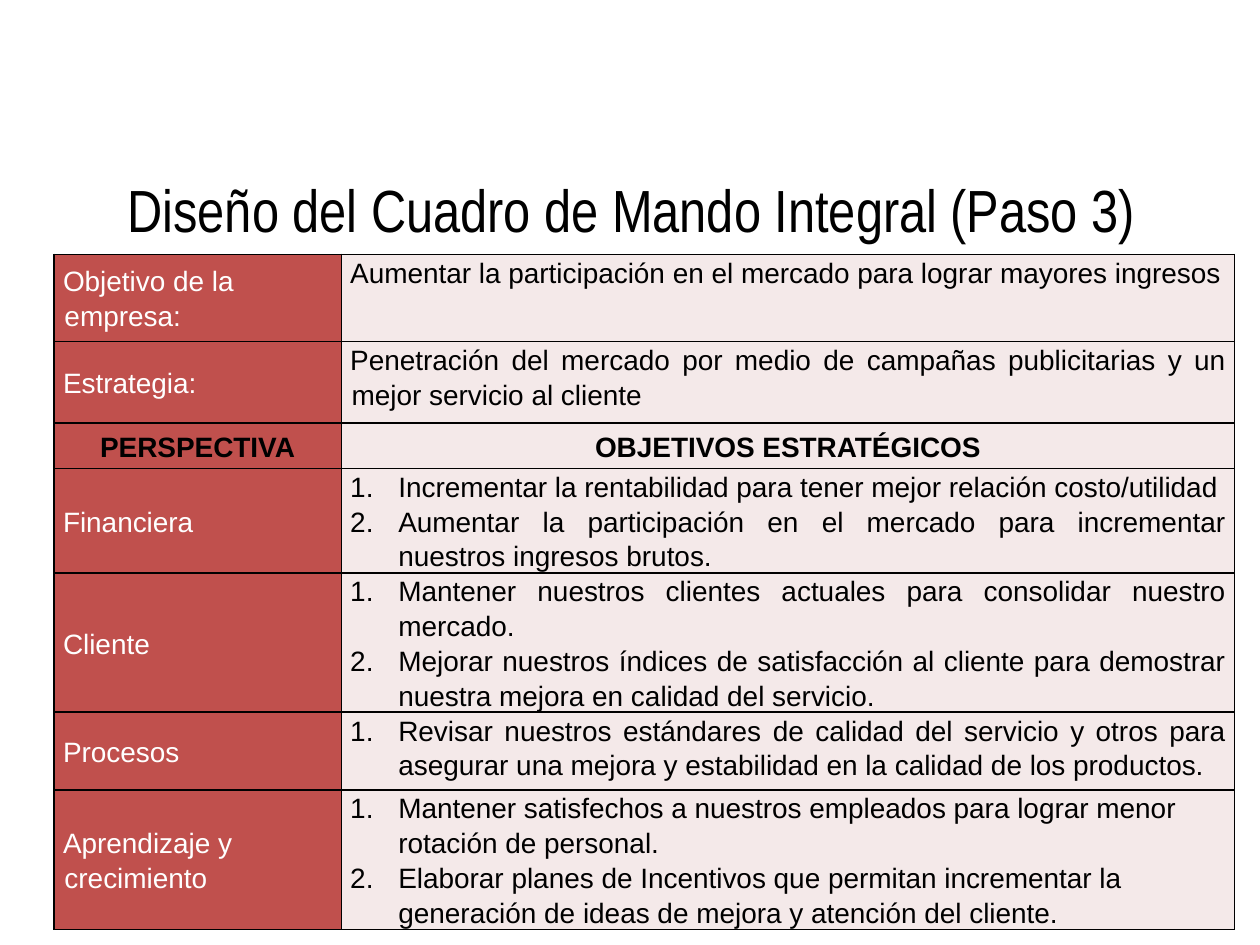
import pptx
import pptx.dml.color
import pptx.enum.text
import pptx.oxml
import pptx.oxml.ns
import pptx.util
from lxml import etree

Cm, Pt = pptx.util.Cm, pptx.util.Pt
ALIGN = pptx.enum.text.PP_ALIGN
ANCHOR = pptx.enum.text.MSO_ANCHOR

# Content: kind, left cell, right cell, row height in cm
TITLE = "Diseño del Cuadro de Mando Integral (Paso 3)"
ROWS = [
    ("plain", "Objetivo de la empresa:",
     ["Aumentar la participación en el mercado para lograr mayores ingresos"], 1.75),
    ("plain", "Estrategia:",
     ["Penetración del mercado por medio de campañas publicitarias y un mejor "
      "servicio al cliente"], 1.65),
    ("head", "PERSPECTIVA", ["OBJETIVOS ESTRATÉGICOS"], 0.91),
    ("list", "Financiera",
     ["Incrementar la rentabilidad para tener mejor relación costo/utilidad",
      "Aumentar la participación en el mercado para incrementar nuestros "
      "ingresos brutos."], 1.57),
    ("list", "Cliente",
     ["Mantener nuestros clientes actuales para consolidar nuestro mercado.",
      "Mejorar nuestros índices de satisfacción al cliente para demostrar "
      "nuestra mejora en calidad del servicio."], 2.36),
    ("list", "Procesos",
     ["Revisar nuestros estándares de calidad del servicio y otros para "
      "asegurar una mejora y estabilidad en la calidad de los productos."], 1.57),
    ("left list", "Aprendizaje y crecimiento",
     ["Mantener satisfechos a nuestros empleados para lograr menor rotación "
      "de personal.",
      "Elaborar planes de Incentivos que permitan incrementar la generación "
      "de ideas de mejora y atención del cliente."], 2.36),
]
WIDTHS = (5.79, 18.01)
RED, PINK, BLACK, WHITE = "C0504D", "F4E9E9", "000000", "FFFFFF"


def paint(target, color):
    target.rgb = pptx.dml.color.RGBColor.from_string(color)


def border(cell):
    props = cell._tc.get_or_add_tcPr()
    for place, side in enumerate(("lnL", "lnR", "lnT", "lnB")):
        line = pptx.oxml.parse_xml(
            f'<a:{side} {pptx.oxml.ns.nsdecls("a")} w="12700"><a:solidFill>'
            f'<a:srgbClr val="{BLACK}"/></a:solidFill></a:{side}>')
        props.insert(place, line)


def indent(para, size, number):
    props = para._p.get_or_add_pPr()
    props.set("marL", str(Cm(size)))
    props.set("indent", str(-Cm(size)))
    if number:
        mark = etree.SubElement(props, pptx.oxml.ns.qn("a:buAutoNum"))
        mark.set("type", "arabicPeriod")


def write(cell, texts, fill, color, align, anchor, bold=False, number=False):
    cell.fill.solid()
    paint(cell.fill.fore_color, fill)
    border(cell)
    cell.margin_left = cell.margin_right = Cm(0.18)
    cell.margin_top = cell.margin_bottom = 0
    cell.vertical_anchor = anchor
    cell.text = "\n".join(texts)
    for para in cell.text_frame.paragraphs:
        indent(para, 0.97 if number else 0.03, number)
        para.alignment = align
        para.line_spacing = 1.12
        font = para.font
        font.name, font.size, font.bold = "Arial", Pt(16), bold
        paint(font.color, color)


def main():
    deck = pptx.Presentation()
    deck.slide_width, deck.slide_height = Cm(25.4), Cm(19.05)
    slide = deck.slides.add_slide(deck.slide_layouts[5])

    # Title
    title = slide.shapes.title
    title.left, title.top = Cm(1.3), Cm(2.92)
    title.width, title.height = Cm(22.86), Cm(2.57)
    frame = title.text_frame
    frame.text = TITLE
    frame.vertical_anchor = ANCHOR.MIDDLE
    para = frame.paragraphs[0]
    para.alignment = ALIGN.CENTER
    para.font.name, para.font.size = "Arial Narrow", Pt(34)
    paint(para.font.color, BLACK)

    # Table
    high = sum(row[-1] for row in ROWS)
    table = slide.shapes.add_table(len(ROWS), 2, Cm(1.09), Cm(5.13),
                                   Cm(sum(WIDTHS)), Cm(high)).table
    table.first_row = table.horz_banding = False
    for col, width in zip(table.columns, WIDTHS):
        col.width = Cm(width)
    for num, (kind, label, texts, height) in enumerate(ROWS):
        table.rows[num].height = Cm(height)
        left, right = table.cell(num, 0), table.cell(num, 1)
        if kind == "head":
            for cell, words, fill in ((left, [label], RED), (right, texts, PINK)):
                write(cell, words, fill, BLACK, ALIGN.CENTER, ANCHOR.MIDDLE, bold=True)
            continue
        write(left, [label], RED, WHITE, ALIGN.LEFT, ANCHOR.MIDDLE)
        align = ALIGN.LEFT if kind == "left list" else ALIGN.JUSTIFY
        write(right, texts, PINK, BLACK, align, ANCHOR.TOP, number="list" in kind)

    deck.save("out.pptx")


if __name__ == "__main__":
    main()
